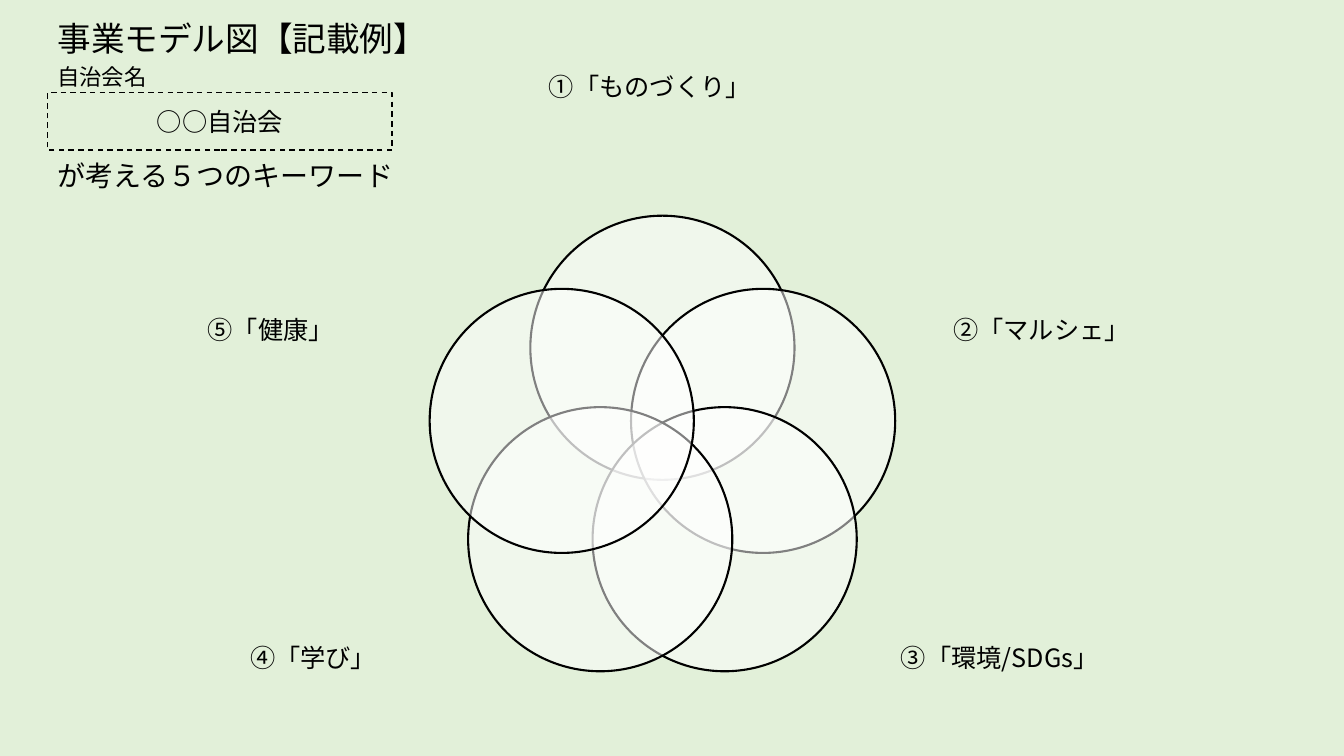
"""Build a slide with a five-circle keyword diagram for a residents' association."""
import math

import pptx
import pptx.dml.color
import pptx.enum.dml
import pptx.enum.lang
import pptx.enum.shapes
import pptx.enum.text
import pptx.oxml
import pptx.oxml.ns
import pptx.util

TITLE = ("事業モデル図【記載例】", (0.47, 0.13, 3.9, 0.5))
CAPTION = ("自治会名", (0.47, 0.58, 1.1, 0.37))
ASSOCIATION = ("○○自治会", (0.47, 0.92, 3.42, 0.57))
LEAD = ("が考える５つのキーワード", (0.47, 1.52, 3.57, 0.44))
KEYWORDS = [
    ("①「ものづくり」　", (5.05, 0, 3.04, 1.76)),
    ("②「マルシェ」　", (9.09, 2.33, 2.73, 1.91)),
    ("③「環境/SDGs」　", (8.07, 5.59, 3.94, 1.91)),
    ("④「学び」", (1.74, 5.59, 2.73, 1.91)),
    ("⑤「健康」", (1.32, 2.33, 2.73, 1.91)),
]
SLIDE_SIZE = (13.33, 7.5)
RING_CENTER = (6.57, 4.5)
RING_RADIUS = 1.05
CIRCLE_SIZE = 2.62
TITLE_ONLY_LAYOUT = 5


class Theme:
    """Colours, fonts and sizes."""
    background = "E2F0D9"
    ink = "000000"
    circle = "FFFFFF"
    circle_alpha = 50
    circle_line = 1.5
    frame_line = 1
    font = "Noto Sans CJK JP"
    latin = "Arial"
    title = 24
    lead = 20
    keyword = 18
    caption = 16


Align = pptx.enum.text.PP_ALIGN
Anchor = pptx.enum.text.MSO_ANCHOR
AutoSize = pptx.enum.text.MSO_AUTO_SIZE
Preset = pptx.enum.shapes.MSO_SHAPE


def color(value):
    """Return an RGB colour."""
    return pptx.dml.color.RGBColor.from_string(value)


def inches(box):
    """Return a box as slide lengths."""
    return [pptx.util.Inches(length) for length in box]


def write_text(shape, text, size, font=Theme.font, align=Align.LEFT, anchor=Anchor.TOP,
               wrap=False, auto_size=AutoSize.NONE, inset=None, line_spacing=None, space_after=None):
    """Put one formatted paragraph in a shape."""
    frame = shape.text_frame
    frame.word_wrap = wrap
    frame.auto_size = auto_size
    frame.vertical_anchor = anchor
    if inset is not None:
        frame.margin_left = frame.margin_right = pptx.util.Inches(inset)
        frame.margin_top = frame.margin_bottom = pptx.util.Inches(inset)
    paragraph = frame.paragraphs[0]
    paragraph.alignment = align
    paragraph.line_spacing = line_spacing
    paragraph.space_after = space_after
    run = paragraph.add_run()
    run.text = text
    run.font.size = pptx.util.Pt(size)
    run.font.name = font
    run.font.color.rgb = color(Theme.ink)
    run.font.language_id = pptx.enum.lang.MSO_LANGUAGE_ID.JAPANESE
    namespace = pptx.oxml.ns.nsdecls("a")
    east_asian = pptx.oxml.parse_xml(f'<a:ea {namespace} typeface="{Theme.font}"/>')
    run.font._element.find(pptx.oxml.ns.qn("a:latin")).addnext(east_asian)


def add_outlined(slide, preset, box, line_width):
    """Add a preset shape with a dark outline."""
    shape = slide.shapes.add_shape(preset, *inches(box))
    shape.shadow.inherit = False
    shape.line.color.rgb = color(Theme.ink)
    shape.line.width = pptx.util.Pt(line_width)
    return shape


def add_circle(slide, index):
    """Add one translucent circle, clockwise from the top of the ring."""
    angle = 2 * math.pi * index / len(KEYWORDS)
    left = RING_CENTER[0] + RING_RADIUS * math.sin(angle) - CIRCLE_SIZE / 2
    top = RING_CENTER[1] - RING_RADIUS * math.cos(angle) - CIRCLE_SIZE / 2
    circle = add_outlined(slide, Preset.OVAL, (left, top, CIRCLE_SIZE, CIRCLE_SIZE), Theme.circle_line)
    circle.fill.solid()
    circle.fill.fore_color.rgb = color(Theme.circle)
    namespace = pptx.oxml.ns.nsdecls("a")
    alpha = pptx.oxml.parse_xml(f'<a:alpha {namespace} val="{Theme.circle_alpha * 1000}"/>')
    fill = circle._element.spPr.find(pptx.oxml.ns.qn("a:solidFill"))
    fill[0].append(alpha)


def add_heading(slide):
    """Add the title, the framed association name and the lines around it."""
    text, box = TITLE
    title = slide.shapes.title
    title.left, title.top, title.width, title.height = inches(box)
    write_text(title, text, Theme.title, auto_size=AutoSize.SHAPE_TO_FIT_TEXT)
    for (text, box), size in ((CAPTION, Theme.caption), (LEAD, Theme.lead)):
        write_text(slide.shapes.add_textbox(*inches(box)), text, size, font=Theme.latin,
                   auto_size=AutoSize.SHAPE_TO_FIT_TEXT)
    text, box = ASSOCIATION
    frame = add_outlined(slide, Preset.RECTANGLE, box, Theme.frame_line)
    frame.fill.background()
    frame.line.dash_style = pptx.enum.dml.MSO_LINE.DASH
    write_text(frame, text, Theme.keyword, align=Align.CENTER, anchor=Anchor.MIDDLE, wrap=True)


def main():
    """Build and save the slide."""
    presentation = pptx.Presentation()
    presentation.slide_width, presentation.slide_height = inches(SLIDE_SIZE)
    slide = presentation.slides.add_slide(presentation.slide_layouts[TITLE_ONLY_LAYOUT])
    slide.background.fill.solid()
    slide.background.fill.fore_color.rgb = color(Theme.background)
    for index, (text, box) in enumerate(KEYWORDS):
        add_circle(slide, index)
        write_text(slide.shapes.add_textbox(*inches(box)), text, Theme.keyword,
                   align=Align.CENTER, anchor=Anchor.MIDDLE, wrap=True, inset=0,
                   line_spacing=0.9, space_after=pptx.util.Pt(6.3))
    add_heading(slide)
    presentation.save("out.pptx")


if __name__ == "__main__":
    main()
